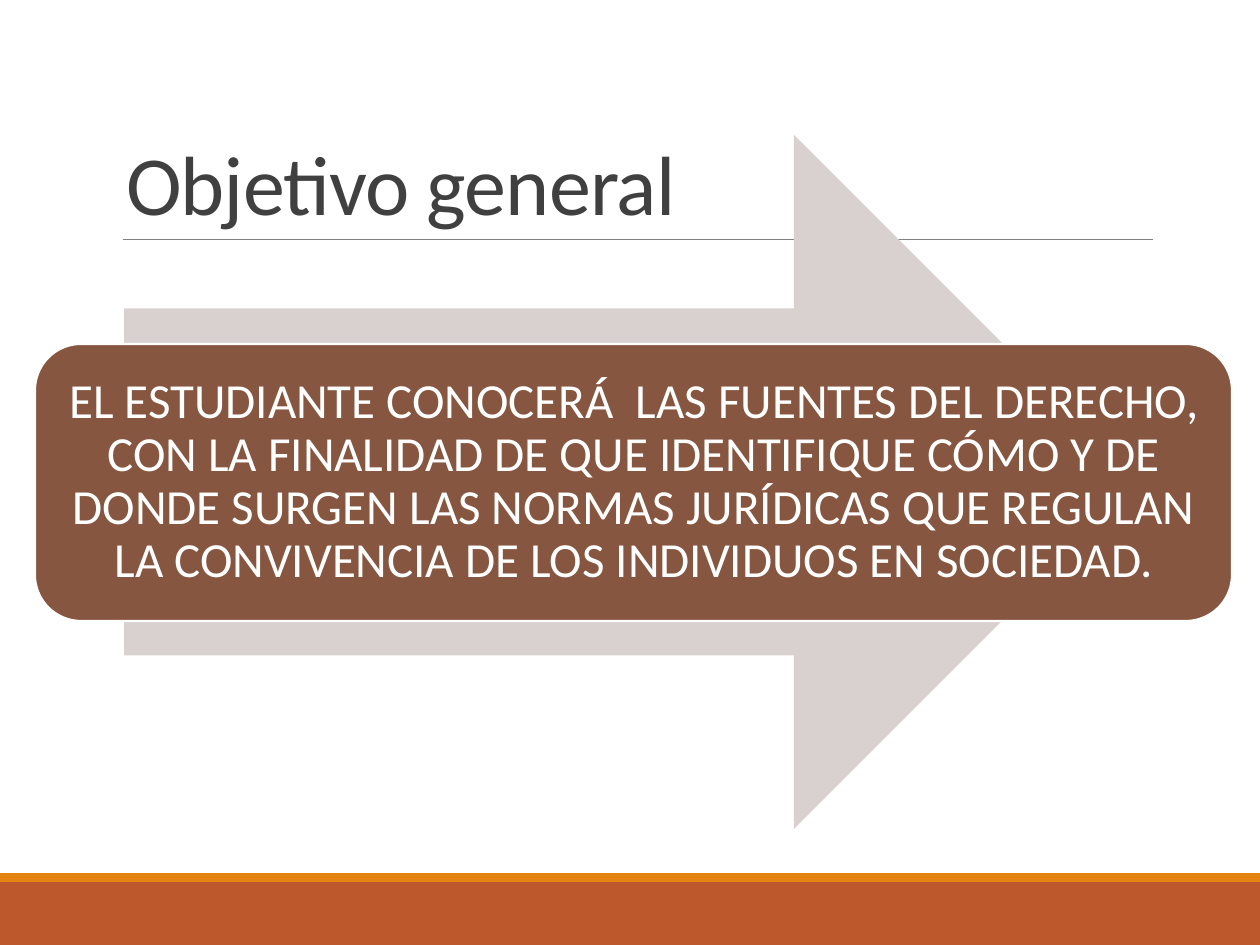
from pptx import Presentation
from pptx.dml.color import RGBColor
from pptx.enum.shapes import MSO_CONNECTOR, MSO_SHAPE
from pptx.enum.text import MSO_ANCHOR, PP_ALIGN
from pptx.oxml.ns import qn
from pptx.util import Emu, Pt
from lxml import etree

RECT = MSO_SHAPE.RECTANGLE
ARROW = MSO_SHAPE.RIGHT_ARROW
ROUND = MSO_SHAPE.ROUNDED_RECTANGLE
STRAIGHT = MSO_CONNECTOR.STRAIGHT
LEFT, CENTER = PP_ALIGN.LEFT, PP_ALIGN.CENTER
MIDDLE, BOTTOM = MSO_ANCHOR.MIDDLE, MSO_ANCHOR.BOTTOM

RUST = RGBColor(0xBD, 0x58, 0x2C)
ORANGE = RGBColor(0xE4, 0x83, 0x12)
GRAY = RGBColor(0x80, 0x80, 0x80)
DARK = RGBColor(0x40, 0x40, 0x40)
PALE = RGBColor(0xD9, 0xD1, 0xCF)
BROWN = RGBColor(0x86, 0x56, 0x40)
WHITE = RGBColor(0xFF, 0xFF, 0xFF)

FONT = "Calibri"
SCALE = 914400 / 126
WIDTH, HEIGHT = 1260, 945
GOAL = (
    "EL ESTUDIANTE CONOCERÁ  LAS FUENTES DEL DERECHO, CON LA FINALIDAD "
    "DE QUE IDENTIFIQUE CÓMO Y DE DONDE SURGEN LAS NORMAS JURÍDICAS QUE "
    "REGULAN LA CONVIVENCIA DE LOS INDIVIDUOS EN SOCIEDAD."
)


def px(*nums):
    return [Emu(round(n * SCALE)) for n in nums]


def add_block(slide, kind, box, fill, edge=None):
    shape = slide.shapes.add_shape(kind, *px(*box))
    shape.shadow.inherit = False
    shape.fill.solid()
    shape.fill.fore_color.rgb = fill
    if edge is None:
        shape.line.fill.background()
    else:
        shape.line.color.rgb = edge
        shape.line.width = Pt(1.25)
    return shape


def add_rule(slide, x1, x2, y):
    line = slide.shapes.add_connector(STRAIGHT, *px(x1, y, x2, y))
    line.line.color.rgb = GRAY
    line.line.width = Pt(0.5)
    etree.SubElement(line._element.spPr, qn("a:effectLst"))


def write(shape, text, size, color, align, anchor, lead, inset):
    """Fill a shape with one paragraph; inset is (side, top and bottom)."""
    frame = shape.text_frame
    frame.word_wrap = True
    frame.vertical_anchor = anchor
    side, end = px(*inset)
    frame.margin_left = frame.margin_right = side
    frame.margin_top = frame.margin_bottom = end
    para = frame.paragraphs[0]
    para.alignment = align
    para.line_spacing = lead
    run = para.add_run()
    run.text = text
    run.font.name = FONT
    run.font.size = Pt(size)
    run.font.color.rgb = color
    return run


def add_title(slide, text):
    box = slide.shapes.add_textbox(*px(113, 39, 1040, 200))
    run = write(box, text, 48, DARK, LEFT, BOTTOM, 0.85, (13, 6))
    run.font._element.set("spc", "-50")


def main():
    deck = Presentation()
    deck.slide_width, deck.slide_height = px(WIDTH, HEIGHT)
    slide = deck.slides.add_slide(deck.slide_layouts[6])

    add_block(slide, RECT, (0, 882, WIDTH, 63), RUST)
    add_block(slide, RECT, (0, 873, WIDTH, 9), ORANGE)
    add_rule(slide, 123, 1153, 239)
    add_title(slide, "Objetivo general")

    add_block(slide, ARROW, (124, 135, 1017, 694), PALE)
    card = add_block(slide, ROUND, (35, 344, 1197, 277), BROWN, WHITE)
    write(card, GOAL, 28, WHITE, CENTER, MIDDLE, 0.9, (15, 15))

    deck.save("out.pptx")


if __name__ == "__main__":
    main()
